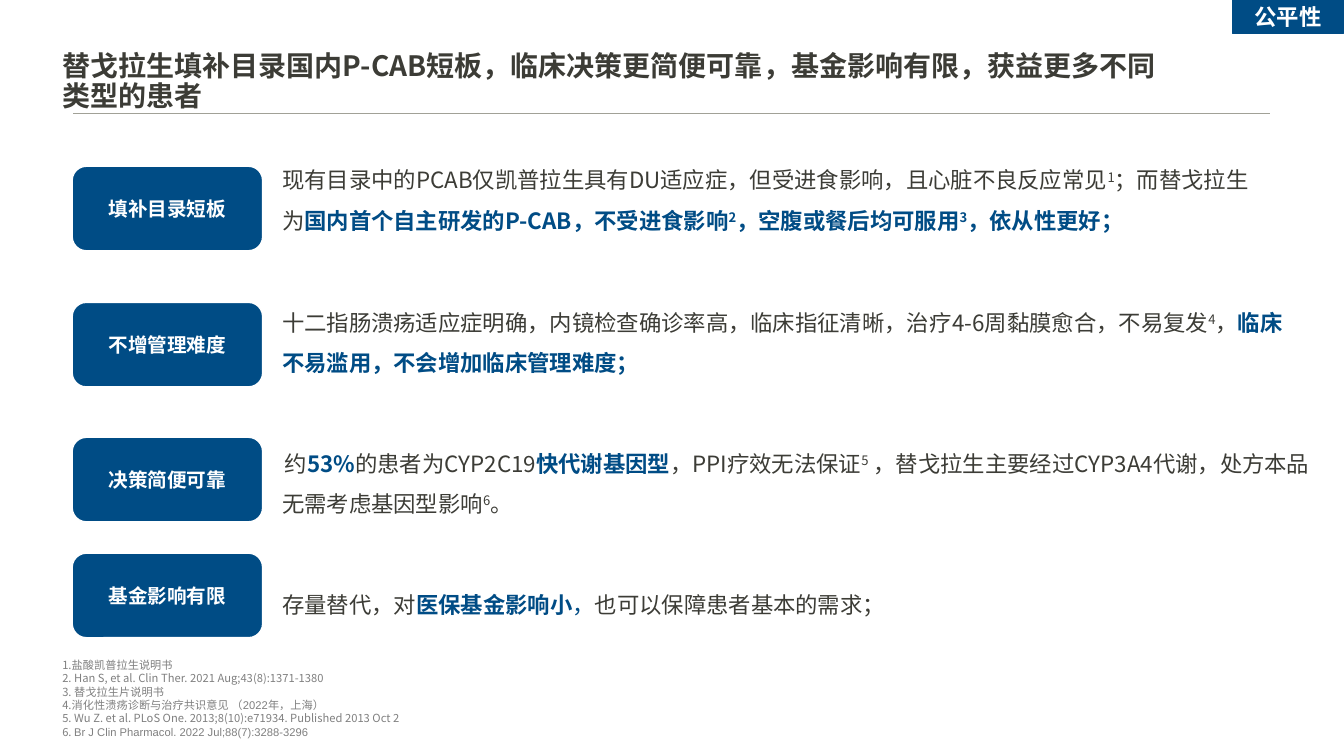
"""Build the fairness slide with four labelled arguments and references."""
from lxml import etree
from pptx import Presentation
from pptx.dml.color import RGBColor
from pptx.enum.shapes import MSO_CONNECTOR, MSO_SHAPE
from pptx.enum.text import MSO_ANCHOR, PP_ALIGN
from pptx.oxml.ns import qn
from pptx.util import Cm, Pt

RECT = MSO_SHAPE.RECTANGLE
ROUNDED = MSO_SHAPE.ROUNDED_RECTANGLE
STRAIGHT = MSO_CONNECTOR.STRAIGHT
MIDDLE, BOTTOM = MSO_ANCHOR.MIDDLE, MSO_ANCHOR.BOTTOM
CENTER, LEFT = PP_ALIGN.CENTER, PP_ALIGN.LEFT

COLORS = {"blue": "004C85", "text": "3C3C36", "grey": "808080",
          "rule": "A1A197", "white": "FFFFFF"}
SANS, ARIAL = "Noto Sans CJK SC", "Arial"
PLAIN, STRONG, TINT = ("text", False), ("blue", True), ("blue", False)
SUPERSCRIPT = "30000"

TITLE = ("替戈拉生填补目录国内P-CAB短板，临床决策更简便可靠，"
         "基金影响有限，获益更多不同类型的患者")

ARGUMENTS = [
    ("填补目录短板", 4.19, 3.73, 25.2, [
        ("现有目录中的PCAB仅凯普拉生具有DU适应症，但受进食影响，且心脏不良反应常见", PLAIN, "1"),
        ("；而替戈拉生为", PLAIN, ""),
        ("国内首个自主研发的P-CAB，不受进食影响", STRONG, "2"),
        ("，空腹或餐后均可服用", STRONG, "3"),
        ("，依从性更好；", STRONG, "")]),
    ("不增管理难度", 7.62, 7.32, 25.86, [
        ("十二指肠溃疡适应症明确，内镜检查确诊率高，临床指征清晰，治疗4-6周黏膜愈合，不易复发", PLAIN, "4"),
        ("，", PLAIN, ""),
        ("临床不易滥用，不会增加临床管理难度；", STRONG, "")]),
    ("决策简便可靠", 11.02, 10.87, 26.49, [
        ("", PLAIN, " "),
        ("约", PLAIN, ""),
        ("53%", STRONG, ""),
        ("的患者为CYP2C19", PLAIN, ""),
        ("快代谢基因型", STRONG, ""),
        ("，PPI疗效无法保证", PLAIN, "5"),
        (" ，替戈拉生主要经过CYP3A4代谢，处方本品无需考虑基因型影响", PLAIN, "6"),
        ("。", PLAIN, "")]),
    ("基金影响有限", 13.94, 14.43, 18.8, [
        ("存量替代，对", PLAIN, ""),
        ("医保基金影响小", STRONG, ""),
        ("，", TINT, ""),
        ("也可以保障患者基本的需求；", PLAIN, "")]),
]

REFERENCES = [
    [("1.盐酸凯普拉生说明书", SANS)],
    [("2. Han S, et al. Clin Ther. 2021 Aug;43(8):1371-1380", SANS)],
    [("3. 替戈拉生片说明书", SANS)],
    [("4.", SANS), ("消化性溃疡诊断与治疗共识意见 （2022年，上海）", ARIAL)],
    [("5. Wu Z. et al. PLoS One. 2013;8(10):e71934. Published 2013 Oct 2", SANS)],
    [("6. ", SANS), ("Br J Clin Pharmacol. 2022 Jul;88(7):3288-3296", ARIAL)],
]


def rgb(name):
    """Return the named colour."""
    return RGBColor.from_string(COLORS[name])


def style_run(r, size, color, bold=False, font=SANS):
    """Format a run for Latin and East Asian text."""
    r.font.size = Pt(size)
    r.font.bold = bold
    r.font.color.rgb = rgb(color)
    r.font.name = font
    ea = etree.SubElement(r._r.get_or_add_rPr(), qn("a:ea"))
    ea.set("typeface", SANS)


def add_run(p, text, size, color, bold=False, font=SANS):
    """Append a formatted run to a paragraph and return it."""
    r = p.add_run()
    r.text = text
    style_run(r, size, color, bold, font)
    return r


def add_box(slide, left, top, width, height):
    """Add a wrapping text box and return its text frame."""
    sp = slide.shapes.add_textbox(Cm(left), Cm(top), Cm(width), Cm(height))
    tf = sp.text_frame
    tf.word_wrap = True
    return tf


def add_title(slide):
    """Add the headline and the rule below it."""
    tf = add_box(slide, 1.32, 0.13, 28.3, 2.84)
    tf.vertical_anchor = BOTTOM
    tf.text = TITLE
    p = tf.paragraphs[0]
    p.line_spacing = 0.9
    style_run(p.runs[0], 20, "text", True)
    rule = slide.shapes.add_connector(STRAIGHT, Cm(1.85), Cm(2.85), Cm(32), Cm(2.85))
    rule.line.color.rgb = rgb("rule")
    rule.line.width = Pt(0.25)
    etree.SubElement(rule._element.spPr, qn("a:effectLst"))


def add_block(slide, kind, bounds, text, size, line, align, inset, font=SANS):
    """Add a blue block with bold white text."""
    sp = slide.shapes.add_shape(kind, *(Cm(value) for value in bounds))
    sp.shadow.inherit = False
    sp.fill.solid()
    sp.fill.fore_color.rgb = rgb("blue")
    sp.line.color.rgb = rgb(line)
    sp.line.width = Pt(1)
    tf = sp.text_frame
    tf.word_wrap = True
    tf.vertical_anchor = MIDDLE
    tf.margin_left = tf.margin_right = Cm(inset)
    tf.margin_top = tf.margin_bottom = 0
    tf.text = text
    p = tf.paragraphs[0]
    p.alignment = align
    style_run(p.runs[0], size, "white", True, font)


def add_argument(slide, top, width, segments):
    """Add an argument whose segments may end in a citation mark."""
    p = add_box(slide, 6.86, top, width, 2.3).paragraphs[0]
    p.line_spacing = 1.5
    for text, (color, bold), mark in segments:
        if text:
            add_run(p, text, 16, color, bold)
        if mark:
            r = add_run(p, mark, 16, color, bold)
            r._r.get_or_add_rPr().set("baseline", SUPERSCRIPT)


def add_references(slide):
    """Add the numbered references."""
    tf = add_box(slide, 1.32, 16.46, 9.88, 2.31)
    for i, parts in enumerate(REFERENCES):
        p = tf.add_paragraph() if i else tf.paragraphs[0]
        for text, font in parts:
            add_run(p, text, 8, "grey", font=font)


def main():
    """Build and save the slide."""
    prs = Presentation()
    prs.slide_width, prs.slide_height = Cm(33.87), Cm(19.05)
    slide = prs.slides.add_slide(prs.slide_layouts[6])
    add_title(slide)
    add_references(slide)
    for label, label_top, text_top, width, segments in ARGUMENTS:
        add_block(slide, ROUNDED, (1.82, label_top, 4.8, 2.13), label, 14,
                  "white", LEFT, 0.81)
        add_argument(slide, text_top, width, segments)
    add_block(slide, RECT, (31.06, 0, 2.8, 0.84), "公平性", 16, "blue",
              CENTER, 0.25, ARIAL)
    prs.save("out.pptx")


if __name__ == "__main__":
    main()
